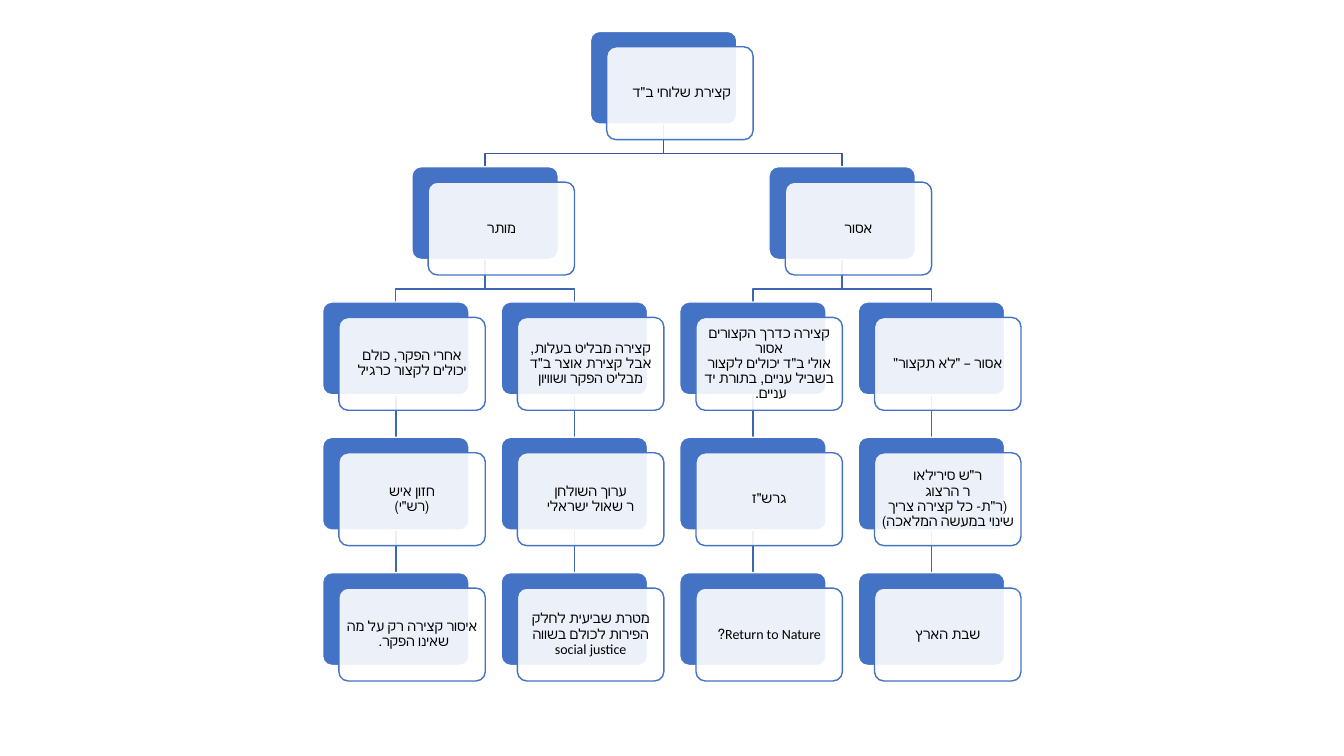
from dataclasses import dataclass, field

from lxml.etree import SubElement
from pptx import Presentation
from pptx.dml.color import RGBColor
from pptx.enum.shapes import MSO_CONNECTOR as Connector, MSO_SHAPE as Shape
from pptx.enum.text import MSO_ANCHOR as Anchor, PP_ALIGN as Align
from pptx.oxml.ns import qn
from pptx.util import Cm, Pt


@dataclass(frozen=True)
class Theme:
    card: RGBColor = RGBColor.from_string("4472C4")
    paper: RGBColor = RGBColor.from_string("FFFFFF")
    text: RGBColor = RGBColor.from_string("000000")
    root_line: RGBColor = RGBColor.from_string("365B9D")
    branch_line: RGBColor = RGBColor.from_string("3E67B2")
    opacity: int = 90
    font: str = "Calibri"
    text_size: Pt = Pt(10)
    space_after: Pt = Pt(3.5)
    line_width: Pt = Pt(1)


@dataclass(frozen=True)
class Box:
    left: int
    top: int
    width: int
    height: int


@dataclass
class Topic:
    text: str
    children: list = field(default_factory=list)
    column: float = 0
    level: int = 0
    box: Box = None
    card: object = None


THEME = Theme()
CARD_WIDTH, CARD_HEIGHT = Cm(3.69), Cm(2.34)
SHIFT_X, SHIFT_Y = Cm(0.41), Cm(0.39)
ELBOW_DROP = Cm(0.74)


def chain(*texts):
    topic = None
    for text in reversed(texts):
        topic = Topic(text, [topic] if topic else [])
    return topic


RULINGS = Topic('קצירת שלוחי ב"ד ', [
    Topic("מותר", [
        chain("אחרי הפקר, כולם יכולים לקצור כרגיל",
              'חזון איש\n(רש"י)',
              "איסור קצירה רק על מה שאינו הפקר. "),
        chain('קצירה מבליט בעלות, אבל קצירת אוצר ב"ד מבליט הפקר ושוויון',
              "ערוך השולחן\nר שאול ישראלי",
              "מטרת שביעית לחלק הפירות לכולם בשווה\nsocial justice"),
    ]),
    Topic("אסור", [
        chain('קצירה כדרך הקצורים אסור\nאולי ב"ד יכולים לקצור בשביל עניים, בתורת יד עניים. ',
              'גרש"ז',
              "Return to Nature?"),
        chain('אסור – "לא תקצור"',
              'ר"ש סירילאו\nר הרצוג\n(ר"ת- כל קצירה צריך שינוי במעשה המלאכה)',
              "שבת הארץ"),
    ]),
])


def arrange(topic, level=0, first_column=0):
    topic.level = level
    next_column = first_column
    for child in topic.children:
        next_column = arrange(child, level + 1, next_column)
    if topic.children:
        topic.column = (topic.children[0].column + topic.children[-1].column) / 2
        return next_column
    topic.column = first_column
    return first_column + 1


def flatten(topic):
    return [topic] + [item for child in topic.children for item in flatten(child)]


def add_card(slide, box, fill, line):
    card = slide.shapes.add_shape(Shape.ROUNDED_RECTANGLE, box.left, box.top, box.width, box.height)
    card.adjustments[0] = 0.1
    card.shadow.inherit = False
    card.fill.solid()
    card.fill.fore_color.rgb = fill
    card.line.color.rgb = line
    card.line.width = THEME.line_width
    return card


def write_text(card, text):
    frame = card.text_frame
    frame.word_wrap = True
    frame.vertical_anchor = Anchor.MIDDLE
    frame.margin_left = frame.margin_right = frame.margin_top = frame.margin_bottom = Cm(0.1)
    paragraph = frame.paragraphs[0]
    paragraph.text = text
    paragraph.alignment = Align.CENTER
    paragraph.line_spacing = 0.9
    paragraph.space_after = THEME.space_after
    paragraph.font.name = THEME.font
    paragraph.font.size = THEME.text_size
    paragraph.font.color.rgb = THEME.text
    paragraph._p.get_or_add_pPr().set("rtl", "1")


def draw_topic(slide, box, topic):
    topic.card = add_card(slide, box, THEME.card, THEME.paper)
    front_box = Box(box.left + SHIFT_X, box.top + SHIFT_Y, box.width, box.height)
    front = add_card(slide, front_box, THEME.paper, THEME.card)
    color = front.fill._xPr.find(qn("a:solidFill")).find(qn("a:srgbClr"))
    SubElement(color, qn("a:alpha"), val=str(THEME.opacity * 1000))
    write_text(front, topic.text)


def draw_link(slide, parent, child):
    start_x = parent.box.left + parent.box.width // 2
    start_y = parent.box.top + parent.box.height
    end_x = child.box.left + child.box.width // 2
    end_y = child.box.top
    straight = len(parent.children) == 1
    if straight:
        link = slide.shapes.add_connector(Connector.STRAIGHT, start_x, start_y, end_x, end_y)
    else:
        bend_y = start_y + ELBOW_DROP
        builder = slide.shapes.build_freeform(start_x, start_y)
        builder.add_line_segments([(start_x, bend_y), (end_x, bend_y), (end_x, end_y)], close=False)
        link = builder.convert_to_shape()
        link.fill.background()
        link.shadow.inherit = False
    link.line.color.rgb = THEME.branch_line if parent.level else THEME.root_line
    link.line.width = THEME.line_width
    if straight:
        SubElement(link._element.spPr, qn("a:effectLst"))
    return link


def draw_tree(slide, box, root):
    columns = arrange(root)
    topics = flatten(root)
    levels = max(topic.level for topic in topics)
    step_x = (box.width - CARD_WIDTH - SHIFT_X) / (columns - 1)
    step_y = (box.height - CARD_HEIGHT - SHIFT_Y) / levels
    for topic in topics:
        topic.box = Box(box.left + round(topic.column * step_x),
                        box.top + round(topic.level * step_y), CARD_WIDTH, CARD_HEIGHT)
    links = [(draw_link(slide, parent, child), parent, child)
             for parent in topics for child in parent.children]
    for topic in topics:
        draw_topic(slide, topic.box, topic)
    for link, parent, child in links:
        if len(parent.children) == 1:
            link.begin_connect(parent.card, 2)
            link.end_connect(child.card, 0)


def main():
    presentation = Presentation()
    presentation.slide_width, presentation.slide_height = Cm(33.87), Cm(19.05)
    slide = presentation.slides.add_slide(presentation.slide_layouts[6])
    draw_tree(slide, Box(Cm(8.13), Cm(0.79), Cm(17.6), Cm(16.37)), RULINGS)
    presentation.save("out.pptx")


if __name__ == "__main__":
    main()
